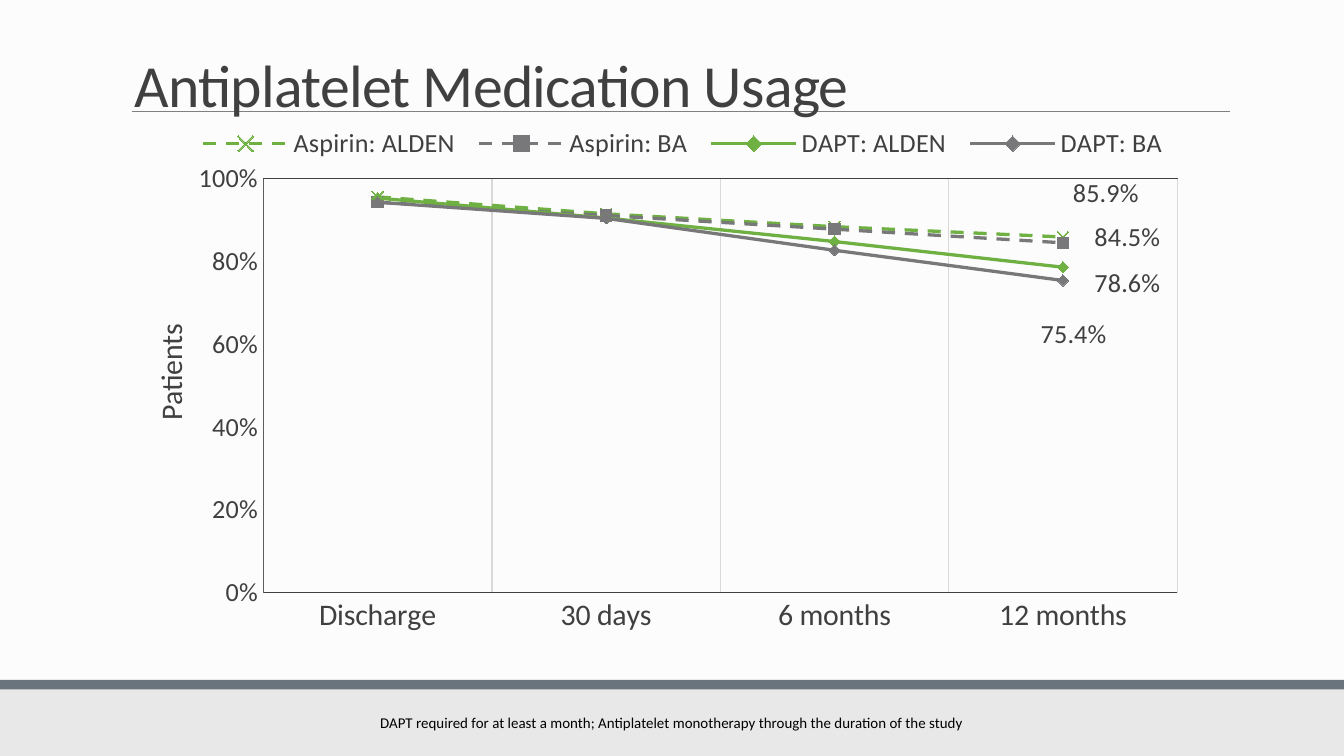
from lxml.etree import SubElement
from pptx import Presentation
from pptx.chart.data import CategoryChartData
from pptx.dml.color import RGBColor
from pptx.enum.chart import XL_CHART_TYPE as ChartType, XL_LABEL_POSITION as LabelPos
from pptx.enum.chart import XL_LEGEND_POSITION as LegendPos, XL_MARKER_STYLE as Marker
from pptx.enum.chart import XL_TICK_MARK as Tick
from pptx.enum.dml import MSO_LINE as Dash
from pptx.enum.shapes import MSO_CONNECTOR as Connector, MSO_SHAPE as Shape
from pptx.enum.text import MSO_ANCHOR as Anchor, PP_ALIGN as Align
from pptx.oxml import parse_xml
from pptx.oxml.ns import nsdecls, qn
from pptx.util import Pt

# Content
TITLE = "Antiplatelet Medication Usage"
FOOTNOTE = ("DAPT required for at least a month; Antiplatelet monotherapy "
            "through the duration of the study")
AXIS_TITLE = "Patients"
VISITS = ["Discharge", "30 days", "6 months", "12 months"]
# name, values, colour, dash, marker, offset of the last label (share of chart)
ARMS = [
    ("Aspirin: ALDEN", (0.956, 0.915, 0.884, 0.859), "green", Dash.DASH, Marker.X, (0.04, -0.03)),
    ("Aspirin: BA", (0.943, 0.911, 0.878, 0.845), "gray", Dash.DASH, Marker.SQUARE, (0.06, 0.04)),
    ("DAPT: ALDEN", (0.953, 0.905, 0.848, 0.786), "green", None, Marker.DIAMOND, (0.06, 0.08)),
    ("DAPT: BA", (0.943, 0.904, 0.827, 0.754), "gray", None, Marker.DIAMOND, (0.01, 0.15)),
]

THEME = {
    "font": "Calibri",
    "colors": {name: RGBColor.from_string(code) for name, code in {
        "paper": "FCFCFC", "footer": "E8E8E8", "band": "6A747C", "rule": "808080",
        "ink": "404040", "note": "000000", "axis": "5D5D5D", "grid": "D9D9D9",
        "green": "6FB042", "gray": "78787A"}.items()},
    "sizes": {"title": 32, "axis": 16, "label": 14, "note": 8},
}
COLORS, SIZES = THEME["colors"], THEME["sizes"]


def style_font(font, size, color="ink"):
    font.name = THEME["font"]
    font.size = Pt(SIZES[size])
    font.bold = False
    font.color.rgb = COLORS[color]


def style_line(line, color, width):
    line.color.rgb = COLORS[color]
    line.width = Pt(width)


def add_bar(shapes, preset, top, height, color):
    bar = shapes.add_shape(preset, 0, Pt(top), Pt(720), Pt(height))
    bar.shadow.inherit = False
    bar.fill.solid()
    bar.fill.fore_color.rgb = COLORS[color]
    bar.line.fill.background()
    return bar


def add_text(shapes, box, text, size, color):
    frame = shapes.add_textbox(*map(Pt, box)).text_frame
    frame.word_wrap = True
    paragraph = frame.paragraphs[0]
    paragraph.text = text
    style_font(paragraph.font, size, color)
    return frame, paragraph


def place_after(sibling, x, y, w=None, h=None, inner=False, edge=True):
    """Give a chart part a manual layout, right after the given element."""
    parent = sibling.getparent()
    for old in parent.findall(qn("c:layout")):
        parent.remove(old)
    target = '<c:layoutTarget val="inner"/>' if inner else ""
    modes = '<c:xMode val="edge"/><c:yMode val="edge"/>' if edge else ""
    extent = f'<c:w val="{w}"/><c:h val="{h}"/>' if w else ""
    sibling.addnext(parse_xml(
        f'<c:layout {nsdecls("c")}><c:manualLayout>{target}{modes}'
        f'<c:x val="{x}"/><c:y val="{y}"/>{extent}</c:manualLayout></c:layout>'))


def style_axes(chart):
    visit_axis, share_axis = chart.category_axis, chart.value_axis
    for axis, size, color in ((visit_axis, "axis", "ink"), (share_axis, "label", "axis")):
        axis.major_tick_mark = axis.minor_tick_mark = Tick.NONE
        style_font(axis.tick_labels.font, size)
        style_line(axis.format.line, color, 0.75)
    visit_axis.has_major_gridlines = True
    style_line(visit_axis.major_gridlines.format.line, "grid", 0.75)
    share_axis.has_major_gridlines = False
    share_axis.minimum_scale, share_axis.maximum_scale, share_axis.major_unit = 0, 1, 0.2
    share_axis.tick_labels.number_format = "0%"
    share_axis.tick_labels.number_format_is_linked = False
    heading = share_axis.axis_title
    heading.text_frame.text = AXIS_TITLE
    style_font(heading.text_frame.paragraphs[0].font, "axis")
    place_after(heading._element.find(qn("c:tx")), 0.01, 0.39)


def style_legend(chart):
    chart.has_legend = True
    legend = chart.legend
    legend.position = LegendPos.TOP
    legend.include_in_layout = False
    style_font(legend.font, "label")
    # Wide enough for all arms in one row above the plot
    place_after(legend._element.find(qn("c:legendPos")), 0.05, 0.03, 0.92, 0.07)


def style_arm(arm, color, dash, marker, offset):
    arm.smooth = False
    style_line(arm.format.line, color, 1.75)
    if dash:
        arm.format.line.dash_style = dash
    arm.marker.style, arm.marker.size = marker, 6
    style_line(arm.marker.format.line, color, 0.75)
    if marker == Marker.X:
        arm.marker.format.fill.background()
    else:
        arm.marker.format.fill.solid()
        arm.marker.format.fill.fore_color.rgb = COLORS[color]
    # Only the last visit carries a value label, without a leader line
    arm.data_labels.show_value = False
    label = arm.points[len(VISITS) - 1].data_label
    style_font(label.font, "label")
    label.position = LabelPos.ABOVE
    labels = arm._element.find(qn("c:dLbls"))
    place_after(labels.find(f'{qn("c:dLbl")}/{qn("c:idx")}'), *offset, edge=False)
    for leader in labels.findall(qn("c:showLeaderLines")):
        leader.set("val", "0")


def add_usage_chart(shapes):
    usage = CategoryChartData(number_format="0.0%")
    usage.categories = VISITS
    for name, values, *_ in ARMS:
        usage.add_series(name, values)
    chart = shapes.add_chart(ChartType.LINE_MARKERS, Pt(72), Pt(58.3), Pt(576), Pt(288), usage).chart
    style_font(chart.font, "label")
    chart.has_title = False
    chart.plots[0].vary_by_categories = False
    style_legend(chart)
    style_axes(chart)
    for arm, (_, _, *look) in zip(chart.plots[0].series, ARMS):
        style_arm(arm, *look)
    # Plot area: fixed place and a thin frame
    plot_area = chart._chartSpace.chart.plotArea
    line_plot = plot_area.find(qn("c:lineChart"))
    place_after(line_plot, 0.12, 0.13, 0.85, 0.77, inner=True)
    plot_area.insert(0, plot_area.find(qn("c:layout")))
    plot_area.append(parse_xml(
        f'<c:spPr {nsdecls("c", "a")}><a:noFill/><a:ln w="{Pt(0.75)}"><a:solidFill>'
        f'<a:srgbClr val="{COLORS["ink"]}"/></a:solidFill></a:ln></c:spPr>'))


def main():
    deck = Presentation()
    deck.slide_width, deck.slide_height = Pt(720), Pt(405)
    slide = deck.slides.add_slide(deck.slide_layouts[6])
    slide.background.fill.solid()
    slide.background.fill.fore_color.rgb = COLORS["paper"]
    shapes = slide.shapes

    # Footer and title rule
    add_bar(shapes, Shape.RECTANGLE, 366, 39, "footer")
    band = add_bar(shapes, Shape.ROUND_2_SAME_RECTANGLE, 364.3, 5, "band")
    band.adjustments[0] = 0
    rule = shapes.add_connector(Connector.STRAIGHT, Pt(70.6), Pt(59.6), Pt(658.8), Pt(59.6))
    style_line(rule.line, "rule", 0.5)
    SubElement(rule._element.spPr, qn("a:effectLst"))

    # Title
    frame, heading = add_text(shapes, (64.8, 17.3, 594, 50.4), TITLE, "title", "ink")
    frame.vertical_anchor = Anchor.BOTTOM
    heading.line_spacing = 0.85
    heading.runs[0]._r.get_or_add_rPr().set("spc", "-40")

    add_usage_chart(shapes)

    # Footnote
    _, note = add_text(shapes, (194.4, 378.7, 331.2, 17), FOOTNOTE, "note", "note")
    note.alignment = Align.CENTER
    deck.save("out.pptx")


if __name__ == "__main__":
    main()
